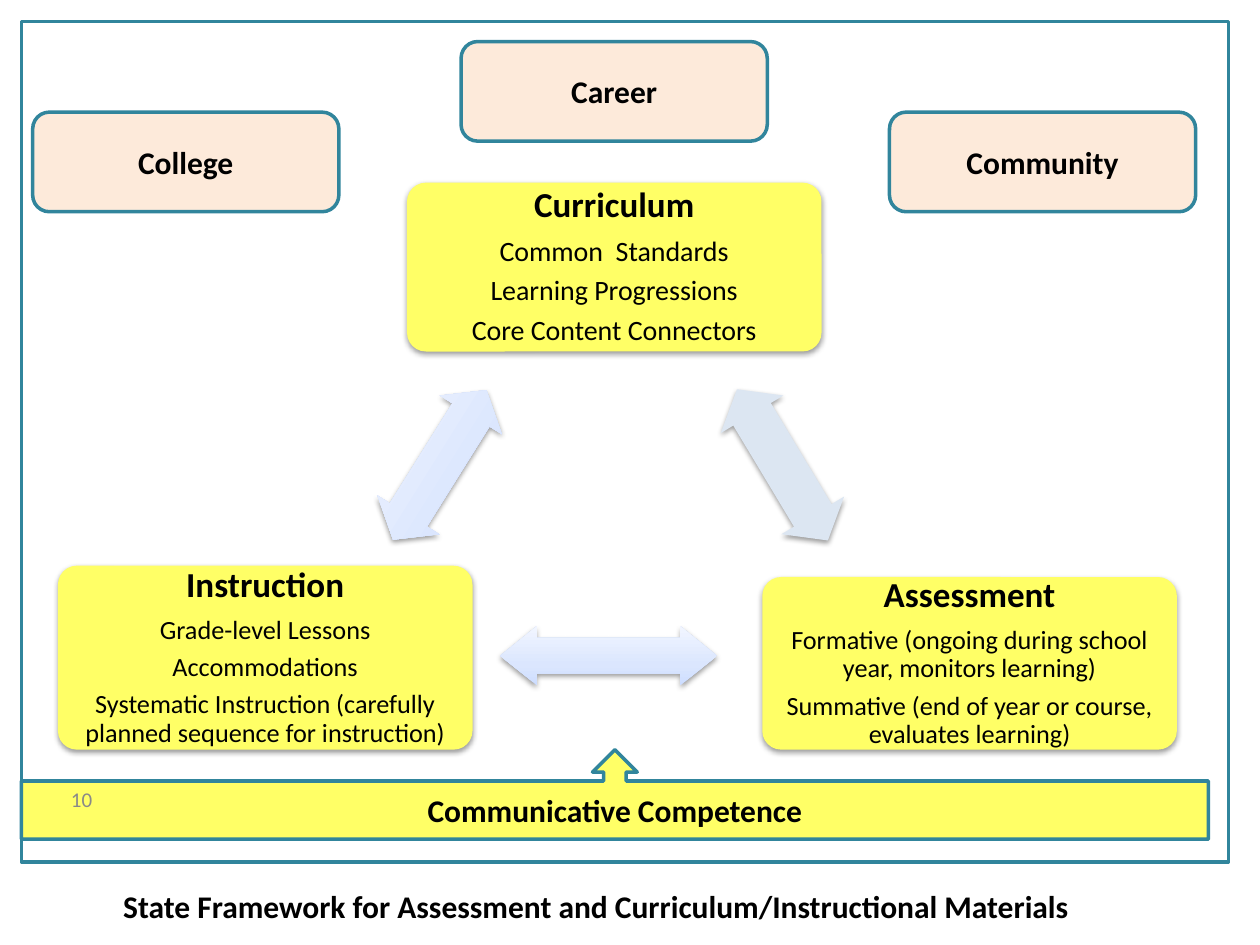
from copy import deepcopy
from dataclasses import dataclass

from lxml import etree
from pptx import Presentation
from pptx.dml.color import RGBColor
from pptx.enum.shapes import MSO_SHAPE as Preset
from pptx.enum.text import MSO_ANCHOR as Anchor, PP_ALIGN as Align
from pptx.oxml.ns import qn
from pptx.util import Emu, Pt

PX = 9144  # EMU per px: 100 px to the inch


@dataclass(frozen=True)
class Theme:
    font: str = "Calibri"
    ink: str = "000000"
    muted: str = "898989"
    outline: str = "31859C"
    goal: str = "FDEADA"
    topic: str = "FFFF66"
    pale_arrow: str = "DCE6F2"
    arrow_gradient: tuple = ((0, "CDDDFF"), (0.35, "DBE6FE"), (1, "F1F5FF"))
    line_width: int = 2
    heading_size: int = 20
    label_size: int = 18
    number_size: int = 12


def px(*lengths):
    return [Emu(length * PX) for length in lengths]


def write(paragraph, text, *, theme, size, bold=False, color=None,
          align=Align.CENTER):
    paragraph.alignment = align
    run = paragraph.add_run()
    run.text = text
    run.font.name = theme.font
    run.font.size = Pt(size)
    run.font.bold = bold
    run.font.color.rgb = RGBColor.from_string(color or theme.ink)


def fill_gradient(shape, stops):
    """Fill with a gradient that runs from the bottom to the top."""
    shape.fill.gradient()
    shape.fill.gradient_angle = 90
    stop_list = next(shape._element.spPr.iter(qn("a:gsLst")))
    while len(stop_list) < len(stops):
        stop_list.append(deepcopy(stop_list[0]))
    for stop, (position, color) in zip(shape.fill.gradient_stops, stops):
        stop.position = position
        stop.color.rgb = RGBColor.from_string(color)


def add_soft_shadow(shape):
    effects = shape._element.spPr.find(qn("a:effectLst"))
    shadow = etree.SubElement(effects, qn("a:outerShdw"), blurRad="40000",
                              dist="20000", dir="5400000", rotWithShape="0")
    color = etree.SubElement(shadow, qn("a:srgbClr"), val="000000")
    etree.SubElement(color, qn("a:alpha"), val="38000")


class FrameworkSlide:
    def __init__(self, slide, theme):
        self.slide = slide
        self.theme = theme

    def shape(self, preset, box, fill=None, outlined=False):
        shape = self.slide.shapes.add_shape(preset, *px(*box))
        shape.shadow.inherit = False
        if fill:
            shape.fill.solid()
            shape.fill.fore_color.rgb = RGBColor.from_string(fill)
        else:
            shape.fill.background()
        if outlined:
            shape.line.color.rgb = RGBColor.from_string(self.theme.outline)
            shape.line.width = Pt(self.theme.line_width)
        else:
            shape.line.fill.background()
        return shape

    def labelled(self, preset, box, fill, label):
        frame = self.shape(preset, box, fill, outlined=True).text_frame
        frame.vertical_anchor = Anchor.MIDDLE
        write(frame.paragraphs[0], label, theme=self.theme,
              size=self.theme.label_size, bold=True)

    def topic(self, box, heading, items, item_size):
        shape = self.shape(Preset.ROUNDED_RECTANGLE, box, self.theme.topic)
        shape.adjustments[0] = 15 / box[3]
        add_soft_shadow(shape)
        frame = shape.text_frame
        frame.word_wrap = True
        frame.vertical_anchor = Anchor.MIDDLE
        (frame.margin_left, frame.margin_top,
         frame.margin_right, frame.margin_bottom) = px(8, 8, 8, 8)
        for index, text in enumerate([heading, *items]):
            paragraph = frame.add_paragraph() if index else frame.paragraphs[0]
            size = item_size if index else self.theme.heading_size
            paragraph.line_spacing = 0.9
            paragraph.space_after = Pt(size / 3)
            write(paragraph, text, theme=self.theme, size=size, bold=not index)

    def double_arrow(self, box, head, rotation=0, fill=None):
        shape = self.shape(Preset.LEFT_RIGHT_ARROW, box, fill)
        shape.adjustments[0] = 0.6
        shape.adjustments[1] = head
        shape.rotation = rotation
        if not fill:
            fill_gradient(shape, self.theme.arrow_gradient)
        add_soft_shadow(shape)

    def text(self, box, text, anchor=Anchor.TOP, **style):
        frame = self.slide.shapes.add_textbox(*px(*box)).text_frame
        frame.word_wrap = True
        frame.vertical_anchor = anchor
        write(frame.paragraphs[0], text, theme=self.theme, **style)


def main():
    presentation = Presentation()
    presentation.slide_width, presentation.slide_height = px(1000, 750)
    theme = Theme()
    slide = presentation.slides.add_slide(presentation.slide_layouts[6])
    page = FrameworkSlide(slide, theme)

    page.shape(Preset.RECTANGLE, (17, 17, 958, 667), outlined=True)
    for index, (label, top) in enumerate(
            [("College", 89), ("Career", 33), ("Community", 89)]):
        page.labelled(Preset.ROUNDED_RECTANGLE, (26 + 340 * index, top, 243, 79),
                      theme.goal, label)
    page.labelled(Preset.UP_ARROW_CALLOUT, (17, 595, 942, 71), theme.topic,
                  "Communicative Competence")

    page.topic((323, 145, 329, 134), "Curriculum",
               ["Common  Standards", "Learning Progressions",
                "Core Content Connectors"], 16)
    page.topic((46, 449, 329, 146), "Instruction",
               ["Grade-level Lessons", "Accommodations",
                "Systematic Instruction (carefully planned sequence "
                "for instruction)"], 15)
    page.topic((605, 458, 329, 137), "Assessment",
               ["Formative (ongoing during school year, monitors learning)",
                "Summative (end of year or course, evaluates learning)"], 15)

    page.double_arrow((397, 497, 172, 47), head=0.62)
    page.double_arrow((551, 340, 140, 58), head=0.4, rotation=59,
                      fill=theme.pale_arrow)
    page.double_arrow((279, 340, 140, 58), head=0.4, rotation=302)

    page.text((0, 614, 83, 40), "10", anchor=Anchor.MIDDLE,
              size=theme.number_size, color=theme.muted, align=Align.RIGHT)
    page.text((88, 699, 857, 40),
              "State Framework for Assessment and Curriculum/Instructional Materials",
              size=theme.label_size, bold=True, align=Align.LEFT)
    presentation.save("out.pptx")


if __name__ == "__main__":
    main()
